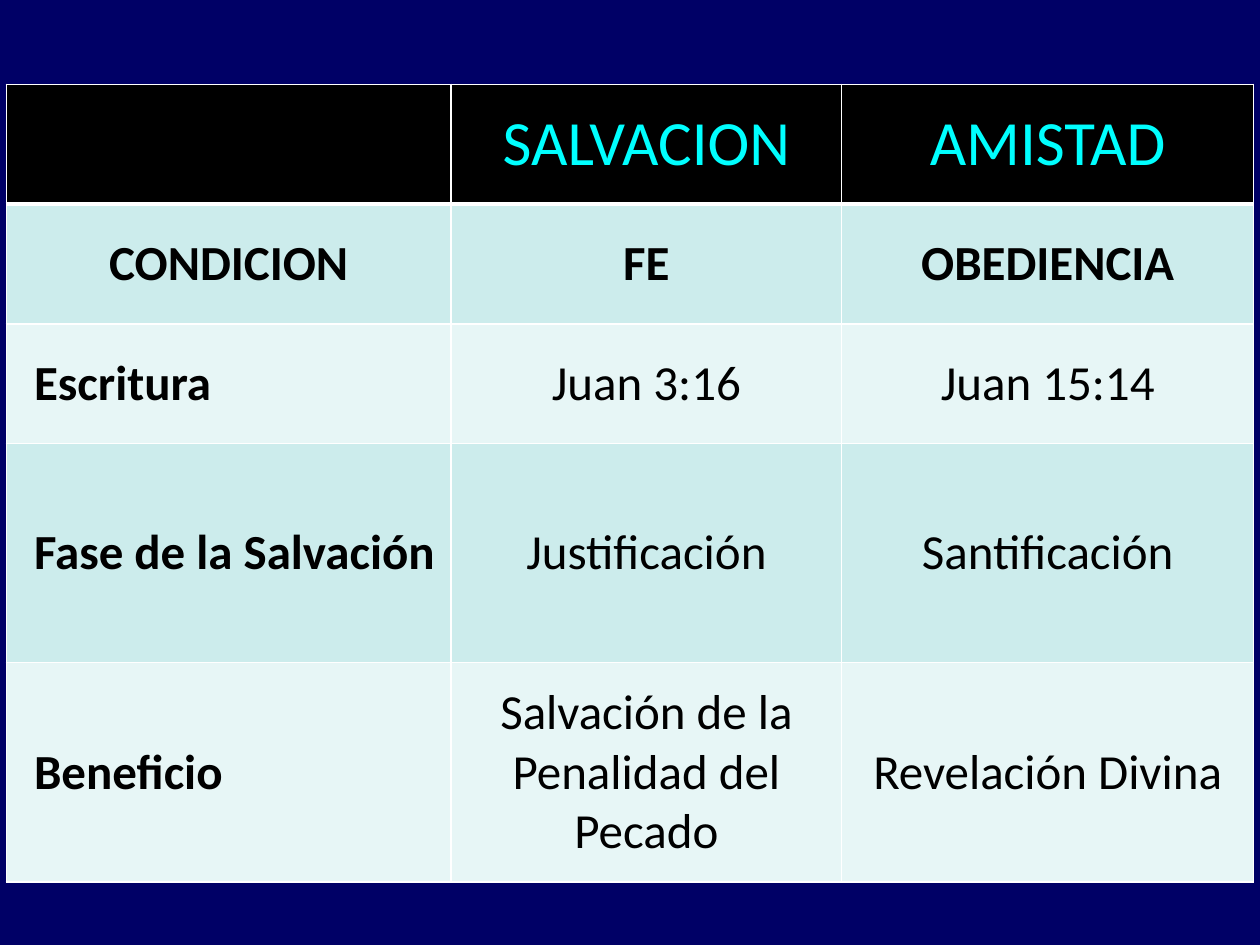
from dataclasses import dataclass
from typing import Any

from lxml.etree import SubElement
from pptx import Presentation
from pptx.dml.color import RGBColor
from pptx.enum.text import MSO_ANCHOR as Anchor, PP_ALIGN as Align
from pptx.oxml.ns import qn
from pptx.util import Inches, Pt

NAVY = RGBColor(0x00, 0x00, 0x66)
BLACK = RGBColor(0x00, 0x00, 0x00)
WHITE = RGBColor(0xFF, 0xFF, 0xFF)
CYAN = RGBColor(0x00, 0xFF, 0xFF)
BANDS = (RGBColor(0xCC, 0xEC, 0xEC), RGBColor(0xE7, 0xF6, 0xF6))

COLUMN_WIDTHS = (3.53, 3.1, 3.27)
ROW_HEIGHTS = (0.95, 0.95, 0.95, 1.74, 1.74)
COMPARISON = (
    ("", "SALVACION", "AMISTAD"),
    ("CONDICION", "FE", "OBEDIENCIA"),
    ("Escritura", "Juan 3:16", "Juan 15:14"),
    ("Fase de la Salvación", "Justificación", "Santificación"),
    ("Beneficio", "Salvación de la Penalidad del Pecado", "Revelación Divina"),
)


@dataclass
class SlideBuilder:
    slide: Any
    font_name: str = "Calibri"
    header_size: int = 36
    body_size: int = 28
    label_indent: float = 0.12

    def background(self, color):
        fill = self.slide.background.fill
        fill.solid()
        fill.fore_color.rgb = color

    def table(self, left, top, widths, heights, rows):
        frame = self.slide.shapes.add_table(
            len(heights), len(widths), Inches(left), Inches(top),
            Inches(sum(widths)), Inches(sum(heights)))
        table = frame.table
        table.first_row = table.horz_banding = False
        for column, width in zip(table.columns, widths):
            column.width = Inches(width)
        for row_index, (height, texts) in enumerate(zip(heights, rows)):
            table.rows[row_index].height = Inches(height)
            for column_index, text in enumerate(texts):
                self.cell(table.cell(row_index, column_index),
                          row_index, column_index, text)

    def cell(self, cell, row_index, column_index, text):
        is_header = row_index == 0
        self.borders(cell, top=3 if row_index == 1 else 1,
                     bottom=3 if is_header else 1)
        cell.fill.solid()
        cell.fill.fore_color.rgb = BLACK if is_header else BANDS[(row_index - 1) % 2]
        cell.vertical_anchor = Anchor.MIDDLE
        paragraph = cell.text_frame.paragraphs[0]
        if column_index == 0 and row_index > 1:
            paragraph.level = 1
            properties = paragraph._p.get_or_add_pPr()
            properties.set("marL", str(Inches(self.label_indent)))
            properties.set("indent", "0")
            paragraph.alignment = Align.LEFT
        else:
            paragraph.alignment = Align.CENTER
        if text:
            run = paragraph.add_run()
            run.text = text
            run.font.name = self.font_name
            run.font.size = Pt(self.header_size if is_header else self.body_size)
            run.font.bold = not is_header and (row_index == 1 or column_index == 0)
            run.font.color.rgb = CYAN if is_header else BLACK

    def borders(self, cell, top, bottom):
        properties = cell._tc.get_or_add_tcPr()
        for side, width in (("L", 1), ("R", 1), ("T", top), ("B", bottom)):
            line = SubElement(properties, qn(f"a:ln{side}"), w=str(Pt(width)))
            fill = SubElement(line, qn("a:solidFill"))
            SubElement(fill, qn("a:srgbClr"), val=str(WHITE))


def main():
    presentation = Presentation()
    presentation.slide_width = Inches(10)
    presentation.slide_height = Inches(7.5)
    builder = SlideBuilder(presentation.slides.add_slide(presentation.slide_layouts[6]))
    builder.background(NAVY)
    builder.table(0.05, 0.67, COLUMN_WIDTHS, ROW_HEIGHTS, COMPARISON)
    presentation.save("out.pptx")


if __name__ == "__main__":
    main()
